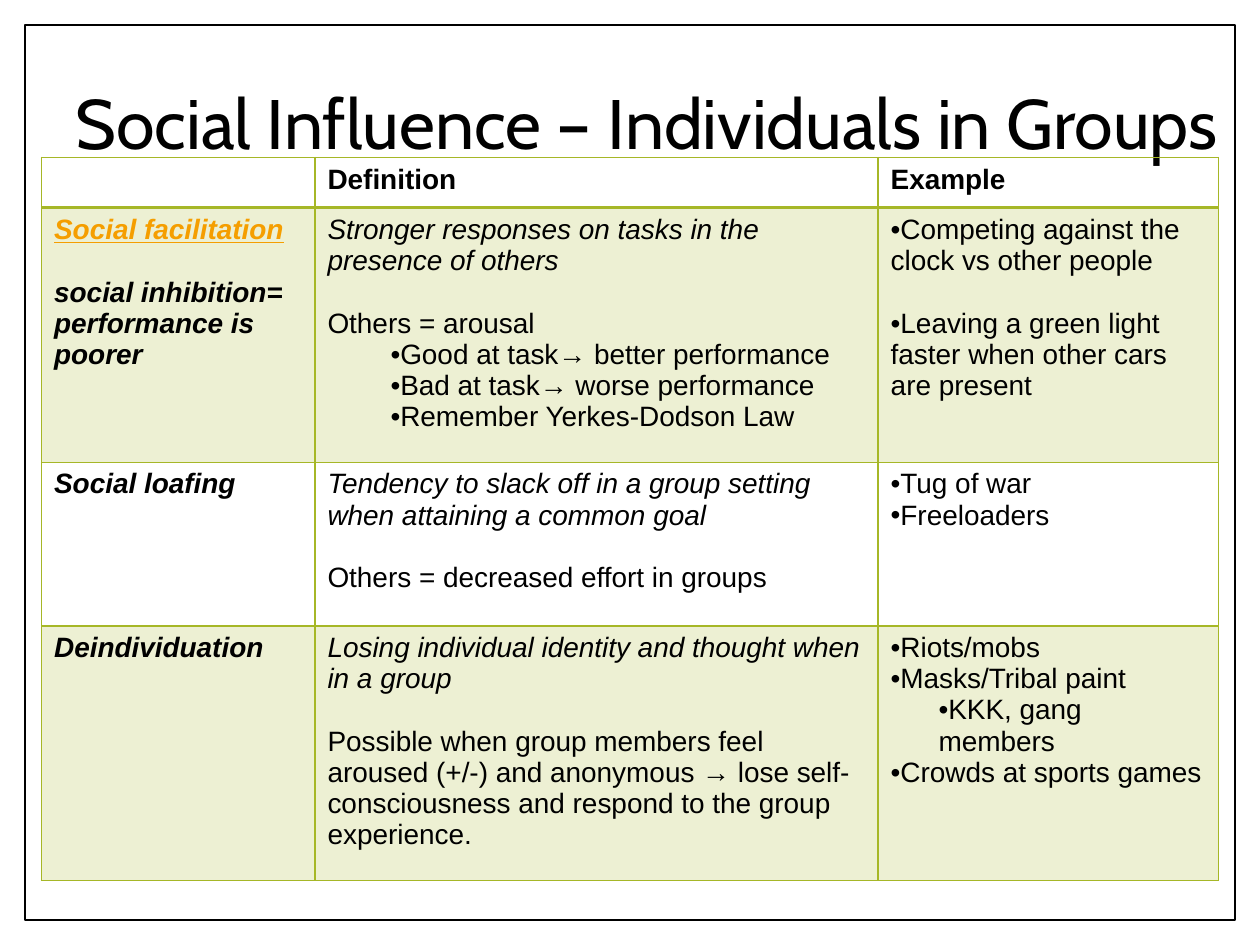
from dataclasses import dataclass

from lxml import etree
from pptx import Presentation
from pptx import util as u
from pptx.dml.color import RGBColor
from pptx.enum import shapes, text
from pptx.oxml import ns

BLACK = RGBColor(0x00, 0x00, 0x00)
WHITE = RGBColor(0xFF, 0xFF, 0xFF)
GREEN = RGBColor(0xA6, 0xB7, 0x27)
ORANGE = RGBColor(0xF5, 0x9E, 0x00)

WIDTH, HEIGHT = u.Inches(10), u.Inches(7.5)
COLUMNS = (2.17, 4.47, 2.7)
ROWS = (0.35, 2.02, 1.3, 2.02)
TEXT_SIZE = 16
LINE_GAP = 18


@dataclass
class Line:
    wording: str
    bold: bool = False
    italic: bool = False
    underline: bool = False
    color: RGBColor = BLACK
    bullet: bool = False
    indent: float = 0
    gap: bool = False


def heading(wording):
    return [Line(wording, bold=True)]


def term(wording, **options):
    return Line(wording, bold=True, italic=True, **options)


def meaning(wording):
    return Line(wording, italic=True)


def point(wording, **options):
    return Line(wording, bullet=True, **options)


CONTENT = [
    [heading(""), heading("Definition"), heading("Example")],
    [
        [term("Social facilitation", underline=True, color=ORANGE),
         term("social inhibition=", gap=True),
         term("performance is poorer")],
        [meaning("Stronger responses on tasks in the presence of others"),
         Line("Others = arousal", gap=True),
         point("Good at task→ better performance", indent=0.5),
         point("Bad at task→ worse performance", indent=0.5),
         point("Remember Yerkes-Dodson Law", indent=0.5)],
        [point("Competing against the clock vs other people"),
         point("Leaving a green light faster when other cars are present", gap=True)],
    ],
    [
        [term("Social loafing")],
        [meaning("Tendency to slack off in a group setting when attaining a common goal"),
         Line("Others = decreased effort in groups", gap=True)],
        [point("Tug of war"), point("Freeloaders")],
    ],
    [
        [term("Deindividuation")],
        [meaning("Losing individual identity and thought when in a group"),
         Line("Possible when group members feel aroused (+/-) and anonymous → "
              "lose self-consciousness and respond to the group experience.", gap=True)],
        [point("Riots/mobs"), point("Masks/Tribal paint"),
         point("KKK, gang members", indent=0.38),
         point("Crowds at sports games")],
    ],
]


def add_frame(page):
    margin = int(WIDTH * 0.02)
    frame = page.shapes.add_shape(shapes.MSO_SHAPE.RECTANGLE, margin, margin,
                                  WIDTH - 2 * margin, HEIGHT - 2 * margin)
    frame.shadow.inherit = False
    frame.fill.solid()
    frame.fill.fore_color.rgb = WHITE
    frame.line.color.rgb = BLACK
    frame.line.width = u.Pt(1)


def add_title(page, wording):
    box = page.shapes.add_textbox(u.Inches(0.5), u.Inches(0.42),
                                  u.Inches(9.5), u.Inches(1.17))
    frame = box.text_frame
    frame.word_wrap = True
    frame.vertical_anchor = text.MSO_ANCHOR.MIDDLE
    frame.text = wording
    para = frame.paragraphs[0]
    para.line_spacing = 0.9
    font = para.runs[0].font
    font.name, font.size = "Cabin", u.Pt(40)
    font.color.rgb = BLACK


def add_bullet(para, indent):
    props = para._p.get_or_add_pPr()
    props.set("marL", str(u.Inches(indent)))
    props.set("indent", "0")
    props.set("lvl", "1" if indent else "0")
    color = etree.SubElement(props, ns.qn("a:buClr"))
    etree.SubElement(color, ns.qn("a:srgbClr"), val=str(BLACK))
    etree.SubElement(props, ns.qn("a:buFont"), typeface="Arial")
    etree.SubElement(props, ns.qn("a:buChar"), char="•")


def write_line(para, line):
    span = para.add_run()
    span.text = line.wording
    font = span.font
    font.name, font.size = "Arial", u.Pt(TEXT_SIZE)
    font.bold, font.italic, font.underline = line.bold, line.italic, line.underline
    font.color.rgb = line.color
    if line.gap:
        para.space_before = u.Pt(LINE_GAP)
    if line.bullet:
        add_bullet(para, line.indent)


def fill_cell(cell, shaded):
    if not shaded:
        cell.fill.background()
        return
    cell.fill.solid()
    cell.fill.fore_color.rgb = GREEN
    color = cell._tc.tcPr.find(".//" + ns.qn("a:srgbClr"))
    etree.SubElement(color, ns.qn("a:alpha"), val="20000")


def add_borders(cell, top, bottom):
    props = cell._tc.get_or_add_tcPr()
    widths = {"lnL": 1, "lnR": 1, "lnT": top, "lnB": bottom}
    for place, (side, points) in enumerate(widths.items()):
        border = etree.Element(ns.qn("a:" + side), w=str(u.Pt(points)))
        fill = etree.SubElement(border, ns.qn("a:solidFill"))
        etree.SubElement(fill, ns.qn("a:srgbClr"), val=str(GREEN))
        props.insert(place, border)


def add_table(page):
    table = page.shapes.add_table(len(ROWS), len(COLUMNS), u.Inches(0.33), u.Inches(1.25),
                                  u.Inches(sum(COLUMNS)), u.Inches(sum(ROWS))).table
    table.first_row = table.horz_banding = False
    for column, width in zip(table.columns, COLUMNS):
        column.width = u.Inches(width)
    for index, (row, height) in enumerate(zip(table.rows, ROWS)):
        row.height = u.Inches(height)
        for cell, lines in zip(row.cells, CONTENT[index]):
            frame = cell.text_frame
            for number, line in enumerate(lines):
                para = frame.add_paragraph() if number else frame.paragraphs[0]
                write_line(para, line)
            fill_cell(cell, index % 2 == 1)
            add_borders(cell, 2 if index == 1 else 1, 2 if index == 0 else 1)


def main():
    deck = Presentation()
    deck.slide_width, deck.slide_height = WIDTH, HEIGHT
    page = deck.slides.add_slide(deck.slide_layouts[6])
    add_frame(page)
    add_title(page, "Social Influence – Individuals in Groups")
    add_table(page)
    deck.save("out.pptx")


if __name__ == "__main__":
    main()
